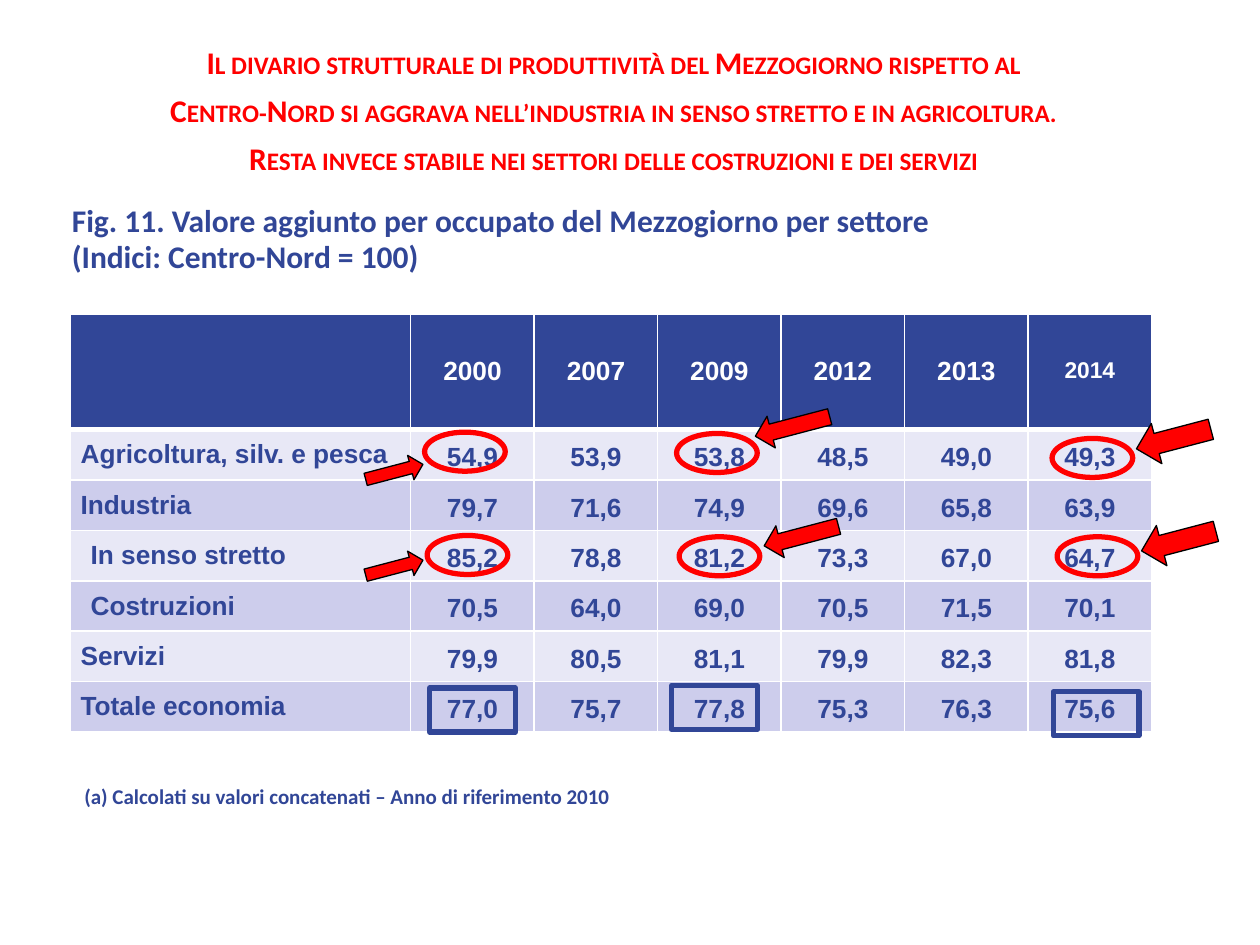
from pptx import Presentation
from pptx.dml.color import RGBColor
from pptx.enum.shapes import MSO_SHAPE as Shape
from pptx.enum.text import MSO_ANCHOR as Anchor, PP_ALIGN as Align
from pptx.oxml import parse_xml
from pptx.oxml.ns import nsdecls
from pptx.util import Inches, Pt

BLUE, RED, WHITE, BLACK = "314697", "FF0000", "FFFFFF", "000000"
BANDS = ["E8E8F6", "CDCDEC"]
YEARS = ["2000", "2007", "2009", "2012", "2013", "2014"]
ROWS = [
    ("Agricoltura, silv. e pesca", 0.04, "54,9 53,9 53,8 48,5 49,0 49,3"),
    ("Industria", 0.04, "79,7 71,6 74,9 69,6 65,8 63,9"),
    ("In senso stretto", 0.12, "85,2 78,8 81,2 73,3 67,0 64,7"),
    ("Costruzioni", 0.12, "70,5 64,0 69,0 70,5 71,5 70,1"),
    ("Servizi", 0.04, "79,9 80,5 81,1 79,9 82,3 81,8"),
    ("Totale economia", 0.04, "77,0 75,7 77,8 75,3 76,3 75,6"),
]
TITLE = [
    "Il divario strutturale di produttività del Mezzogiorno rispetto al",
    "Centro-Nord si aggrava nell’industria in senso stretto e in agricoltura.",
    "Resta invece stabile nei settori delle costruzioni e dei servizi",
]
CAPTION = [
    "Fig. 11. Valore aggiunto per occupato del Mezzogiorno per settore",
    "(Indici: Centro-Nord = 100)",
]
NOTE = ["(a) Calcolati su valori concatenati – Anno di riferimento 2010"]
OVALS = [(3.37, 3.43), (5.37, 3.44), (8.35, 3.48),
         (3.39, 4.25), (5.39, 4.26), (8.39, 4.26)]
BOXES = [(3.41, 5.46), (5.33, 5.44), (8.36, 5.49)]
ARROWS = [
    (9.15, 3.18, 0.33, 0.61, 75.3), (9.19, 3.99, 0.33, 0.61, 75.3),
    (6.16, 3.08, 0.26, 0.61, 75.3), (6.23, 3.95, 0.26, 0.61, 75.3),
    (3.03, 3.51, 0.2, 0.47, 255.3), (3.03, 4.27, 0.2, 0.47, 255.3),
]


def rgb(code):
    """Turn a hex string into a colour."""
    return RGBColor.from_string(code)


def style(para, size, color, face):
    """Set the bold font of a paragraph."""
    font = para.font
    font.name, font.size, font.bold = face, Pt(size), True
    font.color.rgb = rgb(color)


def inset(box, left, top, right, low):
    """Set the inner margins of a cell or text frame."""
    box.margin_left, box.margin_top = Inches(left), Inches(top)
    box.margin_right, box.margin_bottom = Inches(right), Inches(low)


def add_text(slide, place, lines, size, color, gap, align=Align.LEFT, caps=False):
    """Add a text box with one paragraph per line."""
    frame = slide.shapes.add_textbox(*map(Inches, place)).text_frame
    frame.word_wrap = True
    inset(frame, 0.09, 0.04, 0.09, 0.04)
    frame.text = "\n".join(lines)
    for para in frame.paragraphs:
        para.alignment, para.line_spacing = align, gap
        style(para, size, color, "Calibri")
        if caps:
            para._p.pPr.defRPr.set("cap", "small")


def edge(cell, top, low):
    """Draw white borders around a cell."""
    props = cell._tc.get_or_add_tcPr()
    for side, width in zip("LRTB", (1, 1, top, low)):
        props.append(parse_xml(
            f'<a:ln{side} {nsdecls("a")} w="{Pt(width)}"><a:solidFill>'
            f'<a:srgbClr val="{WHITE}"/></a:solidFill></a:ln{side}>'))


def fill_cell(cell, text, fill, color, size=15, align=Align.CENTER):
    """Write a table cell and return its paragraph."""
    cell.fill.solid()
    cell.fill.fore_color.rgb = rgb(fill)
    cell.vertical_anchor = Anchor.MIDDLE
    inset(cell, 0.04, 0, 0.04, 0)
    cell.text = text
    para = cell.text_frame.paragraphs[0]
    para.alignment = align
    style(para, size, color, "Arial")
    return para


def add_grid(slide):
    """Add the table of indices by sector and year."""
    place = map(Inches, (0.56, 2.48, 8.58, 3.33))
    table = slide.shapes.add_table(len(ROWS) + 1, len(YEARS) + 1, *place).table
    table.first_row = table.horz_banding = False
    for i, col in enumerate(table.columns):
        col.width = Inches(0.98 if i else 2.7)
    for i, row in enumerate(table.rows):
        row.height = Inches(0.4 if i else 0.93)
        for cell in row.cells:
            edge(cell, 3 if i < 2 else 1, 1 if i else 3)
    for j, year in enumerate([""] + YEARS):
        fill_cell(table.cell(0, j), year, BLUE, WHITE, 13 if year == "2014" else 15)
    for i, (name, indent, values) in enumerate(ROWS, 1):
        band = BANDS[(i - 1) % 2]
        para = fill_cell(table.cell(i, 0), name, band, BLUE, align=Align.LEFT)
        para._p.pPr.set("marL", str(Inches(indent)))
        for j, value in enumerate(values.split(), 1):
            cell = table.cell(i, j)
            fill_cell(cell, value, band, BLUE).line_spacing = 1.15
            inset(cell, 0.01, 0.01, 0.01, 0)


def add_mark(slide, kind, place, color, width, fill=None, turn=0):
    """Add an outlined shape, filled if a fill is given."""
    mark = slide.shapes.add_shape(kind, *map(Inches, place))
    mark.shadow.inherit = False
    mark.rotation = turn
    mark.line.color.rgb, mark.line.width = rgb(color), Pt(width)
    if fill:
        mark.fill.solid()
        mark.fill.fore_color.rgb = rgb(fill)
    else:
        mark.fill.background()


def main():
    """Build and save the slide."""
    deck = Presentation()
    deck.slide_width, deck.slide_height = Inches(10), Inches(7.5)
    slide = deck.slides.add_slide(deck.slide_layouts[6])
    add_text(slide, (0.48, 1.57, 9.21, 0.67), CAPTION, 18, BLUE, 0.97)
    add_grid(slide)
    add_text(slide, (0.58, 6.19, 9.03, 0.28), NOTE, 12, BLUE, 0.97)
    add_text(slide, (0.37, 0.22, 9, 1.22), TITLE, 18, RED, Pt(27.4), Align.CENTER, True)
    for x, y in OVALS:
        add_mark(slide, Shape.OVAL, (x, y, 0.64, 0.31), RED, 3)
    for x, y in BOXES:
        add_mark(slide, Shape.RECTANGLE, (x, y, 0.68, 0.35), BLUE, 3)
    for *place, turn in ARROWS:
        add_mark(slide, Shape.DOWN_ARROW, place, BLACK, 0.75, RED, turn)
    deck.save("out.pptx")


if __name__ == "__main__":
    main()
